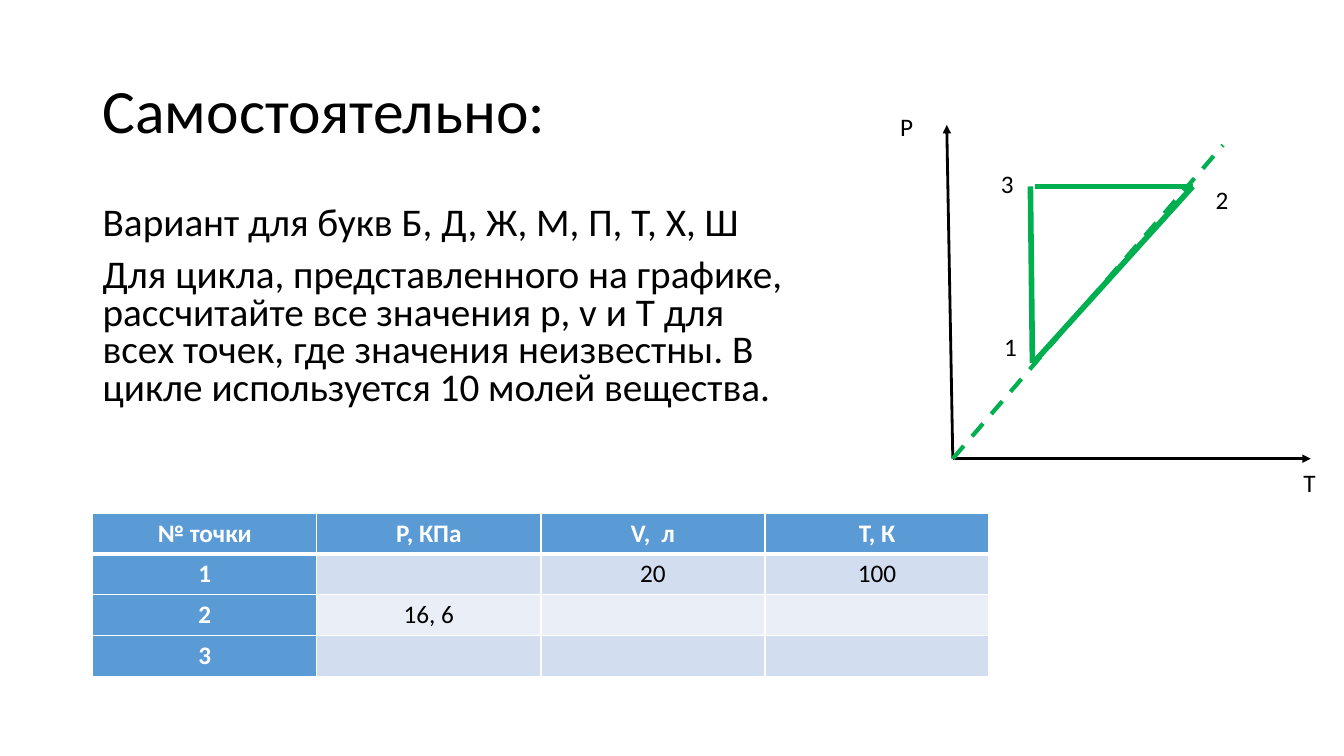
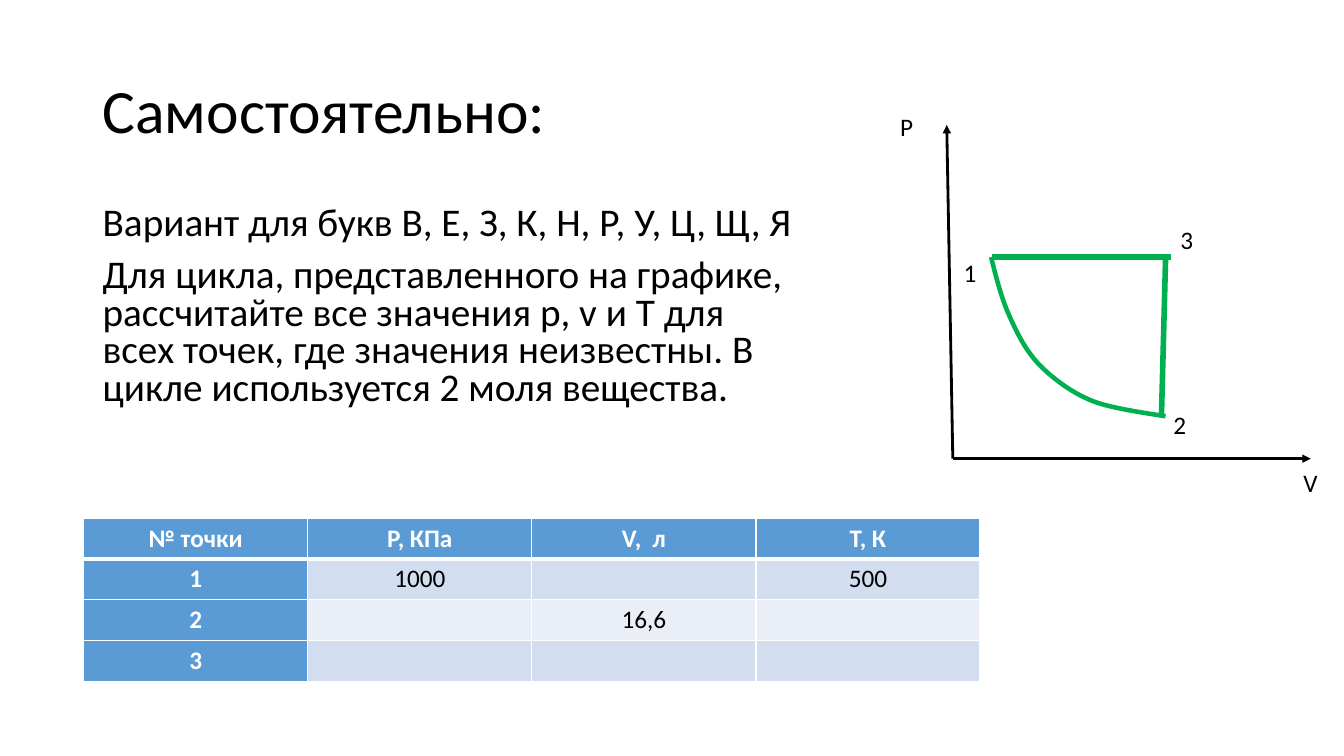
from pptx import Presentation
from pptx.dml.color import RGBColor
from pptx.enum.dml import MSO_LINE
from pptx.enum.text import MSO_ANCHOR, PP_ALIGN
from pptx.oxml.xmlchemy import OxmlElement as Element
from pptx.util import Inches, Pt

FONT = "Calibri"
BLACK, WHITE, GREEN = "000000", "FFFFFF", "00B050"
BLUE, BANDS = "5B9BD5", ("D2DEEF", "EAEFF7")
TITLE = "Самостоятельно:"
TASK = ("Для цикла, представленного на графике, рассчитайте все значения p, v и T "
        "для всех точек, где значения неизвестны. В цикле используется {} вещества.")
HEAD = ("№ точки", "P, КПа", "V,  л", "T, К")
ORIGIN = (9.45, 4.55)
AXES = ((9.39, 1.24), (13, 4.55))

SLIDES = [
    {
        "letters": "Б, Д, Ж, М, П, Т, Х, Ш",
        "amount": "10 молей",
        "labels": [("P", 8.83, 1.06), ("T", 12.83, 4.59), ("1", 9.86, 3.24),
                   ("2", 11.96, 1.78), ("3", 9.83, 1.62)],
        "lines": [((10.24, 3.6), (10.22, 1.85)), ((11.83, 1.85), (10.27, 1.85)),
                  ((10.24, 3.61), (11.83, 1.85))],
        "dashed": [(ORIGIN, (12.13, 1.44))],
        "curve": [],
        "table": (0.92, 5.09),
        "rows": [("1", "", "20", "100"), ("2", "16, 6", "", ""), ("3", "", "", "")],
    },
    {
        "letters": "В, Е, З, К, Н, Р, У, Ц, Щ, Я",
        "amount": "2 моля",
        "labels": [("P", 8.83, 1.06), ("V", 12.83, 4.59), ("1", 9.46, 2.5),
                   ("2", 11.54, 4.01), ("3", 11.61, 2.18)],
        "lines": [((11.61, 2.55), (9.84, 2.55)), ((11.52, 4.12), (11.56, 2.58))],
        "dashed": [],
        "curve": [(9.83, 2.55), (9.88, 2.75), (9.93, 2.95), (10.01, 3.13),
                  (10.09, 3.31), (10.18, 3.49), (10.32, 3.63),
                  (10.46, 3.77), (10.64, 3.9), (10.84, 3.98),
                  (11.04, 4.06), (11.52, 4.12), (11.56, 4.13)],
        "table": (0.83, 5.14),
        "rows": [("1", "1000", "", "500"), ("2", "", "16,6", ""), ("3", "", "", "")],
    },
]


def color(code):
    return RGBColor.from_string(code)


def style(para, size, code=BLACK, bold=False):
    font = para.font
    font.name, font.size, font.bold = FONT, Pt(size), bold
    font.color.rgb = color(code)


def add_text(slide, box, paras, size, wrap=True, anchor=MSO_ANCHOR.TOP, pitch=1.0, gap=0):
    frame = slide.shapes.add_textbox(*map(Inches, box)).text_frame
    frame.word_wrap, frame.vertical_anchor = wrap, anchor
    frame.text = "\n".join(paras)
    for para in frame.paragraphs:
        style(para, size)
        para.line_spacing, para.space_before = pitch, Pt(gap)


def add_line(slide, start, end, code=GREEN, width=4, dash=False, arrow=False):
    line = slide.shapes.add_connector(1, *map(Inches, start + end))
    line.line.color.rgb, line.line.width = color(code), Pt(width)
    if dash:
        line.line.dash_style = MSO_LINE.DASH
    if arrow:
        tip = Element("a:tailEnd")
        tip.set("type", "triangle")
        line.line._get_or_add_ln().append(tip)
    line._element.spPr.append(Element("a:effectLst"))


def bezier(nodes, steps=12):
    points = [nodes[0]]
    for i in range(0, len(nodes) - 1, 3):
        for k in range(1, steps + 1):
            t = k / steps
            marks = ((1 - t) ** 3, 3 * t * (1 - t) ** 2, 3 * t * t * (1 - t), t ** 3)
            points.append(tuple(sum(m * n[axis] for m, n in zip(marks, nodes[i:i + 4]))
                                for axis in (0, 1)))
    return points


def add_curve(slide, nodes):
    first, *rest = [tuple(map(Inches, point)) for point in bezier(nodes)]
    pen = slide.shapes.build_freeform(*first)
    pen.add_line_segments(rest, close=False)
    curve = pen.convert_to_shape()
    curve.shadow.inherit = False
    curve.fill.background()
    curve.line.color.rgb, curve.line.width = color(GREEN), Pt(3.25)


def add_border(cell, side, width):
    edge = Element(f"a:ln{side}")
    edge.set("w", str(Pt(width)))
    fill, tint = Element("a:solidFill"), Element("a:srgbClr")
    tint.set("val", WHITE)
    fill.append(tint)
    edge.append(fill)
    cell._tc.get_or_add_tcPr().append(edge)


def add_grid(slide, place, rows):
    size = (8.89, 0.405 * len(rows))
    grid = slide.shapes.add_table(len(rows), len(HEAD), *map(Inches, place + size)).table
    grid.first_col = True
    for r, row in enumerate(rows):
        for c, text in enumerate(row):
            cell, key = grid.cell(r, c), r == 0 or c == 0
            cell.text = text
            para = cell.text_frame.paragraphs[0]
            para.alignment = PP_ALIGN.CENTER
            style(para, 18, WHITE if key else BLACK, key)
            for side in "LRTB":
                heavy = (r, side) in ((0, "B"), (1, "T"))
                add_border(cell, side, 3 if heavy else 1)
            cell.fill.solid()
            cell.fill.fore_color.rgb = color(BLUE if key else BANDS[(r - 1) % 2])


def add_slide(deck, data):
    slide = deck.slides.add_slide(deck.slide_layouts[6])
    add_text(slide, (0.92, 0.4, 11.5, 1.45), [TITLE], 44, anchor=MSO_ANCHOR.MIDDLE, pitch=0.9)
    body = ["Вариант для букв " + data["letters"], TASK.format(data["amount"])]
    add_text(slide, (0.92, 2, 7.09, 2.19), body, 28, pitch=0.8, gap=10)
    for end in AXES:
        add_line(slide, ORIGIN, end, BLACK, 2, arrow=True)
    for ends in data["dashed"]:
        add_line(slide, *ends, width=3, dash=True)
    for ends in data["lines"]:
        add_line(slide, *ends)
    if data["curve"]:
        add_curve(slide, data["curve"])
    for text, left, top in data["labels"]:
        add_text(slide, (left, top, 0.33, 0.4), [text], 18, wrap=False)
    add_grid(slide, data["table"], [HEAD] + data["rows"])


def main():
    """Build the two task slides on gas cycles."""
    deck = Presentation()
    deck.slide_width, deck.slide_height = Inches(13.33), Inches(7.5)
    for data in SLIDES:
        add_slide(deck, data)
    deck.save("out.pptx")


if __name__ == "__main__":
    main()
